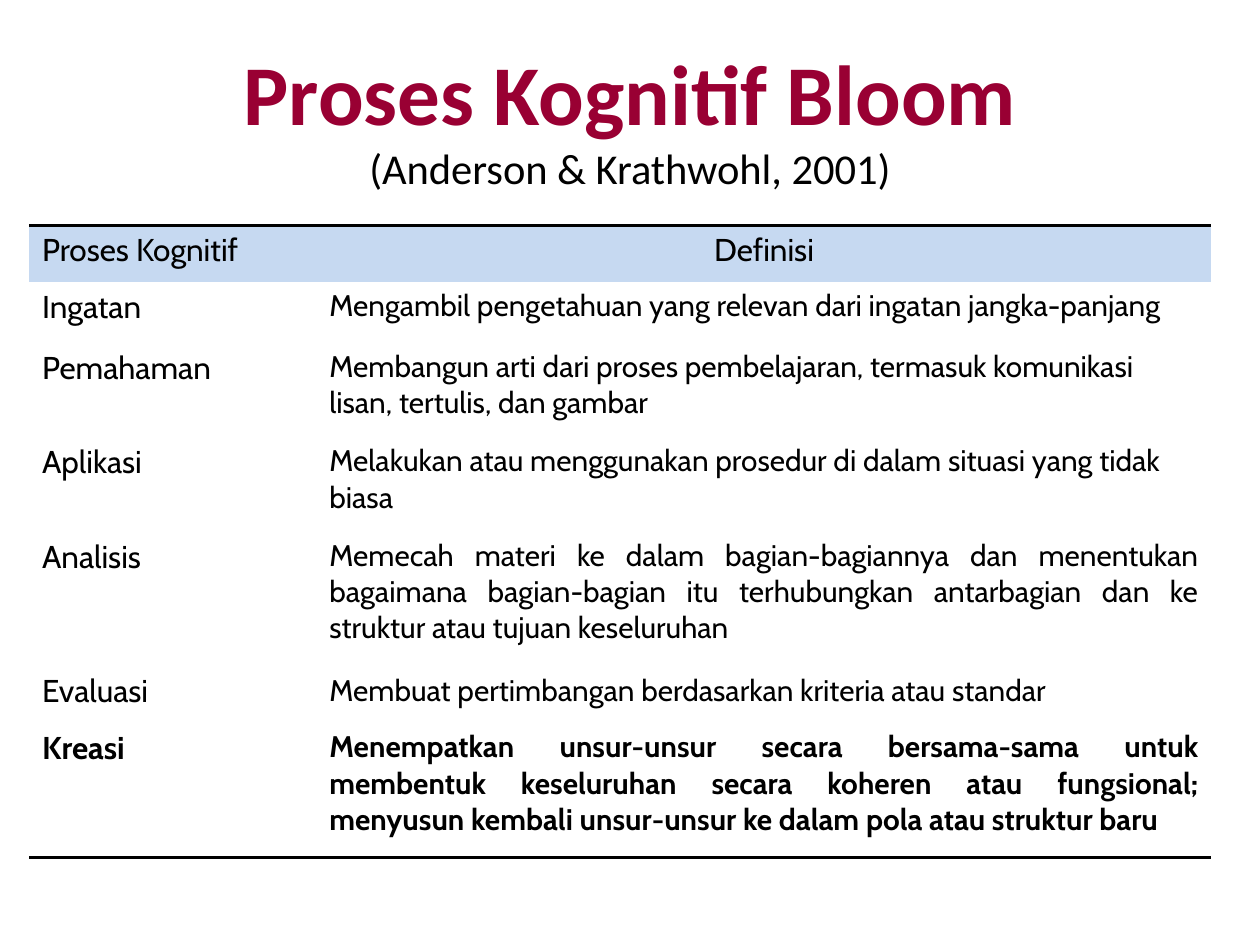
import pptx
import pptx.dml.color
import pptx.enum.text
import pptx.oxml
import pptx.oxml.ns
import pptx.util

Pt = pptx.util.Pt
ALIGN = pptx.enum.text.PP_ALIGN
ANCHOR = pptx.enum.text.MSO_ANCHOR

# Content
COLORS = {"title": "990033", "text": "000000", "header": "C6D9F1", "body": "FFFFFF"}
TITLE_LINES = [
    ("Proses Kognitif Bloom", {"size": Pt(48.6), "bold": True}, "title"),
    ("(Anderson & Krathwohl, 2001)", {"size": Pt(24.3), "bold": False}, "text"),
]
# Process, definition, alignment of the definition, row height
ROWS = [
    ("Proses Kognitif", "Definisi", ALIGN.CENTER, 32.4),
    ("Ingatan", "Mengambil pengetahuan yang relevan dari ingatan jangka-panjang",
     ALIGN.LEFT, 34.6),
    ("Pemahaman", "Membangun arti dari proses pembelajaran, termasuk komunikasi "
     "lisan, tertulis, dan gambar", ALIGN.LEFT, 54),
    ("Aplikasi", "Melakukan atau menggunakan prosedur di dalam situasi yang tidak biasa",
     ALIGN.LEFT, 54),
    ("Analisis", "Memecah materi ke dalam bagian-bagiannya dan menentukan bagaimana "
     "bagian-bagian itu terhubungkan antarbagian dan ke struktur atau tujuan keseluruhan",
     ALIGN.JUSTIFY, 77),
    ("Evaluasi", "Membuat pertimbangan berdasarkan kriteria atau standar",
     ALIGN.LEFT, 32.4),
    ("Kreasi", "Menempatkan unsur-unsur secara bersama-sama untuk membentuk keseluruhan "
     "secara koheren atau fungsional; menyusun kembali unsur-unsur ke dalam pola atau "
     "struktur baru", ALIGN.JUSTIFY, 77),
]
COLUMN_WIDTHS = [164.2, 511.2]
LAST = len(ROWS) - 1


def rgb(name):
    return pptx.dml.color.RGBColor.from_string(COLORS[name])


def add_span(para, text, formats, color):
    span = para.add_run()
    span.text = text
    for name, value in formats.items():
        setattr(span.font, name, value)
    span.font.color.rgb = rgb(color)


def set_borders(cell, ruled_sides):
    properties = cell._tc.get_or_add_tcPr()
    for side in "LRTB":
        if side in ruled_sides:
            fill = f'<a:solidFill><a:srgbClr val="{COLORS["text"]}"/></a:solidFill>'
        else:
            fill = "<a:noFill/>"
        properties.append(pptx.oxml.parse_xml(
            f'<a:ln{side} {pptx.oxml.ns.nsdecls("a")} w="{int(Pt(2))}">{fill}</a:ln{side}>'))


deck = pptx.Presentation()
deck.slide_width, deck.slide_height = Pt(720), Pt(540)
page = deck.slides.add_slide(deck.slide_layouts[5])

# Title with the source on its second line
title = page.shapes.title
title.left, title.top, title.width, title.height = Pt(36), Pt(21.6), Pt(648), Pt(90)
title.text_frame.vertical_anchor = ANCHOR.MIDDLE
title_para = title.text_frame.paragraphs[0]
title_para.alignment = ALIGN.CENTER
for index, (text, formats, color) in enumerate(TITLE_LINES):
    if index:
        title_para.add_line_break()
    add_span(title_para, text, {"name": "Calibri", **formats}, color)

# Table of processes and definitions
table = page.shapes.add_table(
    len(ROWS), len(COLUMN_WIDTHS), Pt(16.8), Pt(128.6),
    Pt(sum(COLUMN_WIDTHS)), Pt(sum(row[-1] for row in ROWS))).table
for column, width in zip(table.columns, COLUMN_WIDTHS):
    column.width = Pt(width)

for row, (process, definition, alignment, height) in enumerate(ROWS):
    table.rows[row].height = Pt(height)
    for column, text in enumerate((process, definition)):
        cell = table.cell(row, column)
        set_borders(cell, {0: "T", LAST: "B"}.get(row, ""))
        cell.fill.solid()
        cell.fill.fore_color.rgb = rgb("body" if row else "header")
        para = cell.text_frame.paragraphs[0]
        para.alignment = alignment if column else ALIGN.LEFT
        size = 17 if row and column else 18
        add_span(para, text, {"name": "Cabin", "size": Pt(size), "bold": row == LAST}, "text")

deck.save("out.pptx")
